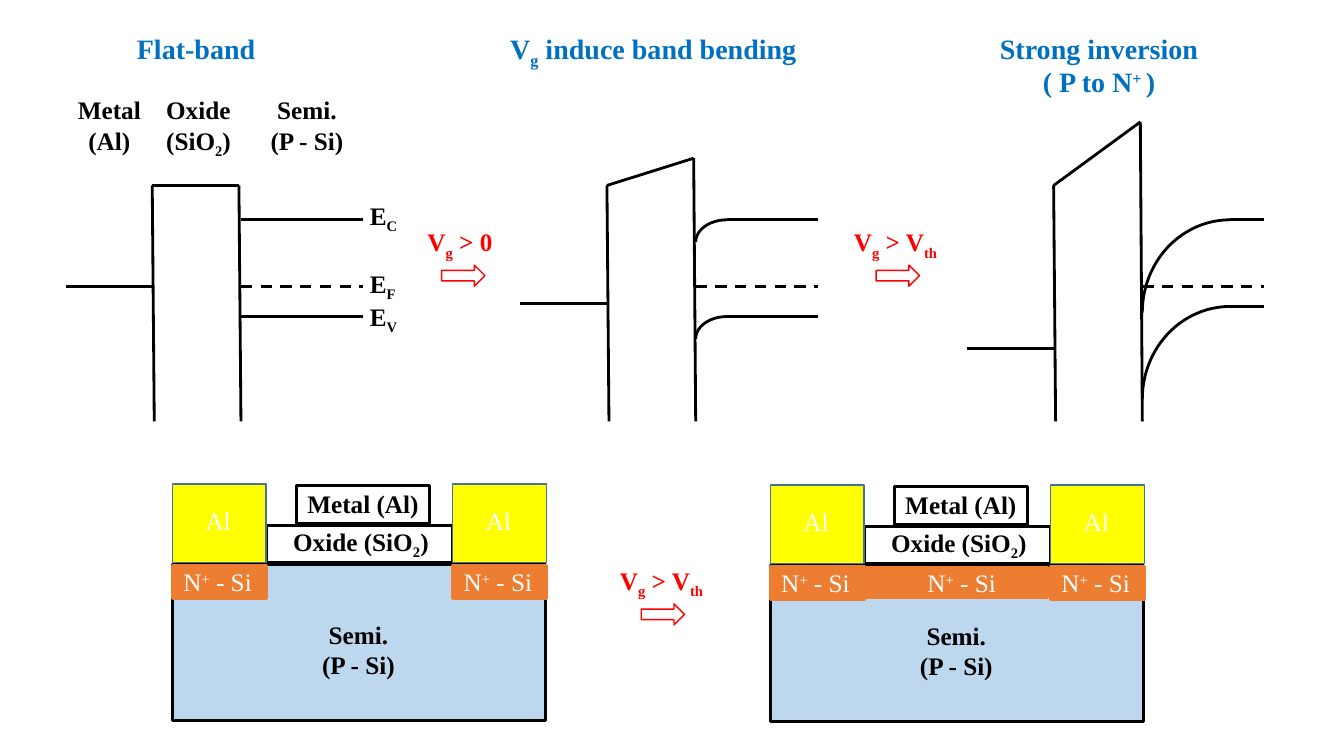
from lxml import etree
from pptx import Presentation
from pptx.dml.color import RGBColor
from pptx.enum.dml import MSO_LINE
from pptx.enum.shapes import MSO_CONNECTOR, MSO_SHAPE
from pptx.enum.text import MSO_AUTO_SIZE, PP_ALIGN
from pptx.oxml.ns import qn
from pptx.util import Inches, Pt

BLACK, WHITE, RED, BLUE = "000000", "FFFFFF", "FF0000", "0070C0"
SILICON, DOPED, ALUMINIUM, ALUMINIUM_EDGE = "BDD7EE", "ED7D31", "FFFF00", "43739E"
BASELINES = {"_": "-25000", "^": "30000"}
SEMI = "Semi.\n(P - Si)"
DOPED_SI = "N|^+| - Si"
THRESHOLD = "V|_g| > V|_th"


def rgb(hex_colour):
    return RGBColor.from_string(hex_colour)


def add_label(slide, text, left, top, width, colour=BLACK, size=18, bold=True,
              align=PP_ALIGN.LEFT):
    """Write text whose runs are split by |; a run starting with _ or ^ is sub- or superscript."""
    lines = text.split("\n")
    height = 0.1 + len(lines) * size / 60
    label = slide.shapes.add_textbox(Inches(left), Inches(top), Inches(width), Inches(height))
    frame = label.text_frame
    frame.word_wrap = False
    frame.auto_size = MSO_AUTO_SIZE.SHAPE_TO_FIT_TEXT
    for index, line in enumerate(lines):
        paragraph = frame.add_paragraph() if index else frame.paragraphs[0]
        paragraph.alignment = align
        font = paragraph.font
        font.name, font.size, font.bold = "Times New Roman", Pt(size), bold
        font.color.rgb = rgb(colour)
        for part in line.split("|"):
            run = paragraph.add_run()
            run.text = part.lstrip("_^")
            if part[0] in BASELINES:
                run.font._element.set("baseline", BASELINES[part[0]])


def add_outlined(slide, kind, left, top, width, height, line=BLACK, weight=2.25, fill=None):
    shape = slide.shapes.add_shape(kind, Inches(left), Inches(top), Inches(width), Inches(height))
    shape.shadow.inherit = False
    shape.line.color.rgb = rgb(line)
    shape.line.width = Pt(weight)
    if fill:
        shape.fill.solid()
        shape.fill.fore_color.rgb = rgb(fill)
    else:
        shape.fill.background()
    return shape


def add_line(slide, start, end, dashed=False):
    line = slide.shapes.add_connector(MSO_CONNECTOR.STRAIGHT, *map(Inches, start + end))
    line.line.color.rgb = rgb(BLACK)
    line.line.width = Pt(2)
    if dashed:
        line.line.dash_style = MSO_LINE.DASH
    etree.SubElement(line._element.spPr, qn("a:effectLst"))


def add_band_edge(slide, surface, right, level, bend):
    """Draw a flat band edge that curves down to the oxide surface when bend = (rx, ry)."""
    rx, ry = bend
    add_line(slide, (surface + rx, level), (right, level))
    if rx:
        arc = add_outlined(slide, MSO_SHAPE.ARC, surface + rx - ry, level + ry - rx,
                           2 * ry, 2 * rx, weight=2)
        arc.rotation = 270


def band_diagram(slide, left, top, metal_level, peak, valence, bend):
    """Draw metal, oxide barrier and semiconductor; levels are measured down from top."""
    oxide, surface, right = left + 0.86, left + 1.74, left + 2.95
    barrier_end, bottom, fermi = left + 1.72, top + 2.34, top + 1
    add_line(slide, (left, top + metal_level), (oxide, top + metal_level))
    add_line(slide, (oxide + 0.02, bottom), (oxide, top))
    add_line(slide, (oxide, top), (barrier_end, top + peak))
    add_line(slide, (surface, bottom), (barrier_end, top + peak))
    for level in (0.34, valence):
        add_band_edge(slide, surface, right, top + level, bend)
    add_line(slide, (surface, fermi), (right, fermi), dashed=True)


def band_labels(slide, left, top):
    for text, dx, width, align in (("Metal\n(Al)", 0.02, 0.83, PP_ALIGN.CENTER),
                                   ("Oxide\n(SiO|_2|)", 0.9, 0.86, PP_ALIGN.LEFT),
                                   (SEMI, 1.93, 0.93, PP_ALIGN.CENTER)):
        add_label(slide, text, left + dx, top, width, align=align)
    for text, dy in (("E|_C", 1.05), ("E|_F", 1.72), ("E|_V", 2.05)):
        add_label(slide, text, left + 2.92, top + dy, 0.49)


def voltage_step(slide, text, left, top, width, arrow_left):
    add_label(slide, text, left, top, width, RED)
    add_outlined(slide, MSO_SHAPE.RIGHT_ARROW, arrow_left, top + 0.43, 0.43, 0.21, RED, 1)


def transistor(slide, left, top, inverted):
    """Draw the device cross-section; an inverted one has an N+ channel under the oxide."""
    def block(dx, dy, width, height, **style):
        add_outlined(slide, MSO_SHAPE.RECTANGLE, left + dx, top + dy, width, height, **style)

    def label(text, dx, dy, width, **style):
        add_label(slide, text, left + dx, top + dy, width, **style)

    doped = {"line": DOPED, "fill": DOPED}
    block(0, 0.8, 3.7, 1.55, fill=SILICON)
    block(0.93, 0.41, 1.85, 0.37)
    block(1.23, 0.02, 1.32, 0.37)
    label("Oxide (SiO|_2|)", 1.1, 0.37, 1.57)
    label("Metal (Al)", 1.23, 0, 1.32, align=PP_ALIGN.CENTER)
    label(SEMI, 1.38, 1.29, 0.93, align=PP_ALIGN.CENTER)
    for side in (0, 2.78):
        block(side, 0.81, 0.93, 0.33, **doped)
        block(side, 0, 0.93, 0.78, line=ALUMINIUM_EDGE, weight=1, fill=ALUMINIUM)
        label("Al", side + 0.23, 0.16, 0.45, colour=WHITE, bold=False)
        label(DOPED_SI, side + 0.01, 0.77, 0.9, colour=WHITE, bold=False)
    if inverted:
        block(0.95, 0.82, 1.8, 0.3, **doped)
        label(DOPED_SI, 1.46, 0.77, 0.9, colour=WHITE, bold=False)


def main():
    prs = Presentation()
    prs.slide_width, prs.slide_height = Inches(13.33), Inches(7.5)
    slide = prs.slides.add_slide(prs.slide_layouts[6])

    for heading, left, width in (("Flat-band", 1.25, 1.39),
                                 ("V|_g| induce band bending", 4.92, 3.12),
                                 ("Strong inversion\n( P to N|^+ |)", 9.81, 2.18)):
        add_label(slide, heading, left, 0.26, width, BLUE, 20, align=PP_ALIGN.CENTER)

    band_diagram(slide, 0.65, 1.84, metal_level=1, peak=0, valence=1.3, bend=(0, 0))
    band_diagram(slide, 5.16, 1.84, metal_level=1.17, peak=-0.27, valence=1.3, bend=(0.31, 0.22))
    band_diagram(slide, 9.59, 1.84, metal_level=1.62, peak=-0.63, valence=1.2, bend=(0.87, 0.92))
    band_labels(slide, 0.65, 0.89)
    voltage_step(slide, "V|_g| > 0", 4.14, 2.2, 0.86, 4.38)
    voltage_step(slide, THRESHOLD, 8.37, 2.2, 1.07, 8.69)

    transistor(slide, 1.71, 4.8, inverted=False)
    transistor(slide, 7.64, 4.81, inverted=True)
    voltage_step(slide, THRESHOLD, 6.05, 5.56, 1.07, 6.36)
    prs.save("out.pptx")


if __name__ == "__main__":
    main()
